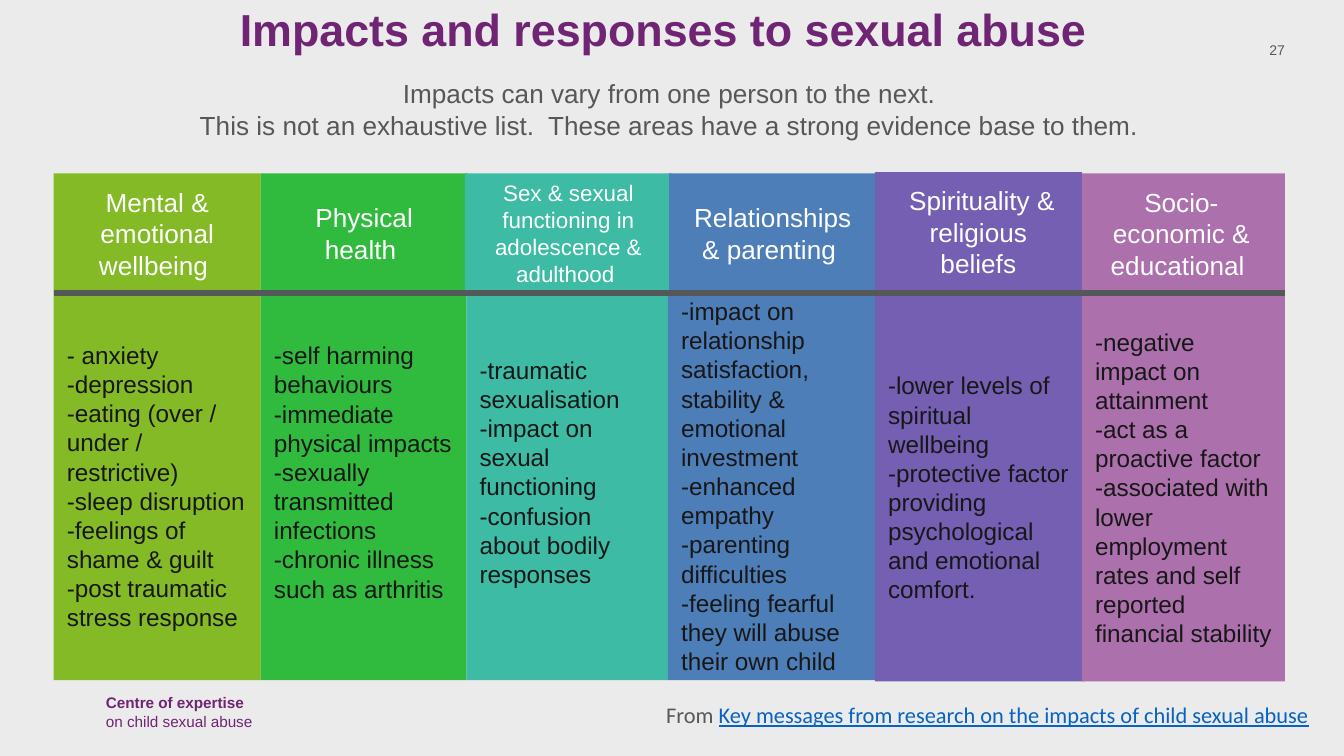
"""Build the slide on impacts and responses to sexual abuse."""
from lxml import etree
from pptx import Presentation
from pptx.dml.color import RGBColor
from pptx.enum import shapes, text
from pptx.oxml import ns
from pptx.util import Inches, Pt

COLORS = {
    "background": "ECEBEC", "title": "702474", "grey": "555859",
    "body": "181718", "white": "FFFFFF", "link": "0563C1",
    "mental": "83BA26", "physical": "31BB3E", "sexual": "3DBBA4",
    "relations": "4D7EB8", "spiritual": "755FB2", "social": "AC70AD",
}
ALIGN = text.PP_ALIGN


def rgb(name):
    return RGBColor.from_string(COLORS[name])


def add_text(s, paragraphs, box, size=13, color="body", font="Arial", bold=False,
             align=ALIGN.LEFT, spacing=None, fill=None, bottom=0.05):
    """Add paragraphs, each a string or a list of (text, overrides) runs."""
    box = [Inches(v) for v in box]
    if fill:
        sp = s.shapes.add_shape(shapes.MSO_SHAPE.RECTANGLE, *box)
        sp.shadow.inherit = False
        sp.fill.solid()
        sp.fill.fore_color.rgb = rgb(fill)
        sp.line.fill.background()
    else:
        sp = s.shapes.add_textbox(*box)
    tf = sp.text_frame
    tf.word_wrap = True
    tf.margin_bottom = Inches(bottom)
    tf.vertical_anchor = text.MSO_ANCHOR.MIDDLE if fill else text.MSO_ANCHOR.TOP
    for i, runs in enumerate(paragraphs):
        p = tf.paragraphs[0] if i == 0 else tf.add_paragraph()
        p.alignment = align
        if spacing:
            p.line_spacing = spacing
        for content, style in [(runs, {})] if isinstance(runs, str) else runs:
            r = p.add_run()
            r.text = content.rstrip("\n")
            r.font.name = font
            r.font.size = Pt(size)
            r.font.bold = style.get("bold", bold)
            r.font.underline = style.get("underline", False)
            r.font.color.rgb = rgb(style.get("color", color))
            if content.endswith("\n"):
                p.add_line_break()
    return sp


prs = Presentation()
prs.slide_width, prs.slide_height = Inches(10), Inches(10 * 9 / 16)
s = prs.slides.add_slide(prs.slide_layouts[6])
s.background.fill.solid()
s.background.fill.fore_color.rgb = rgb("background")

add_text(s, [[("Centre of expertise\n", {}), ("on child sexual abuse", {"bold": False})]],
         (0.69, 5.11, 1.79, 0.38), size=8.2, color="title", bold=True)
add_text(s, ["Impacts and responses to sexual abuse "], (-0.02, 0.01, 10, 0.7),
         size=24, color="title", bold=True, align=ALIGN.CENTER, spacing=0.9)
add_text(s, ["27"], (9.15, 0.26, 0.51, 0.26), size=7.5, color="grey", align=ALIGN.RIGHT)

columns = [
    {"fill": "mental", "body": (0.4, 2.17, 1.54), "head": (0.4, 1.29),
     "title": ["Mental & emotional wellbeing "],
     "points": ["- anxiety", "-depression", "-eating (over / under / restrictive)",
                "-sleep disruption", "-feelings of shame & guilt",
                "-post traumatic stress response"]},
    {"fill": "physical", "body": (1.94, 2.17, 1.53), "head": (1.94, 1.29),
     "title": ["Physical", "health "], "bottom": 0.26,
     "points": ["-self harming behaviours", "-immediate physical impacts",
                "-sexually transmitted infections", "-chronic illness such as arthritis"]},
    {"fill": "sexual", "body": (3.47, 2.17, 1.51), "head": (3.46, 1.29),
     "title": ["Sex & sexual functioning in adolescence & adulthood "],
     "size": 12, "bottom": 0.26,
     "points": ["-traumatic sexualisation", "-impact on sexual functioning",
                "-confusion about bodily responses"]},
    {"fill": "relations", "body": (4.97, 2.17, 1.56), "head": (4.98, 1.29),
     "title": ["Relationships & parenting "],
     "points": ["-impact on relationship satisfaction, stability & emotional investment",
                "-enhanced empathy", "-parenting difficulties",
                "-feeling fearful they will abuse their own child"]},
    {"fill": "spiritual", "body": (6.51, 2.18, 1.56), "head": (6.51, 1.28),
     "title": [" Spirituality & religious beliefs"],
     "points": ["-lower levels of spiritual wellbeing",
                "-protective factor providing psychological and emotional comfort."]},
    {"fill": "social", "body": (8.05, 2.18, 1.51), "head": (8.02, 1.29),
     "title": ["Socio-economic & educational "],
     "points": ["-negative impact on attainment", "-act as a proactive factor",
                "-associated with lower employment rates and self reported financial stability"]},
]
for col in columns:
    add_text(s, col["points"], (*col["body"], 2.89), fill=col["fill"],
             bottom=col.get("bottom", 0.05))

add_text(s, ["Impacts can vary from one person to the next.",
             "This is not an exhaustive list.  These areas have a strong evidence base to them."],
         (0.87, 0.53, 8.22, 0.57), size=14, color="grey", align=ALIGN.CENTER)
add_text(s, [[("From ", {}),
              ("Key messages from research on the impacts of child sexual abuse",
               {"color": "link", "underline": True})]],
         (4.72, 5.17, 5.12, 0.3), size=12, color="grey", font="Calibri", align=ALIGN.RIGHT)

for col in columns[:4] + columns[:3:-1]:
    add_text(s, col["title"], (*col["head"], 1.54, 0.89), size=col.get("size", 14),
             color="white", align=ALIGN.CENTER, fill=col["fill"])

divider = s.shapes.add_connector(shapes.MSO_CONNECTOR.STRAIGHT, Inches(0.4), Inches(2.18),
                                 Inches(9.56), Inches(2.18))
divider.line.color.rgb = rgb("grey")
divider.line.width = Pt(3.5)
etree.SubElement(divider._element.spPr, ns.qn("a:effectLst"))

prs.save("out.pptx")
